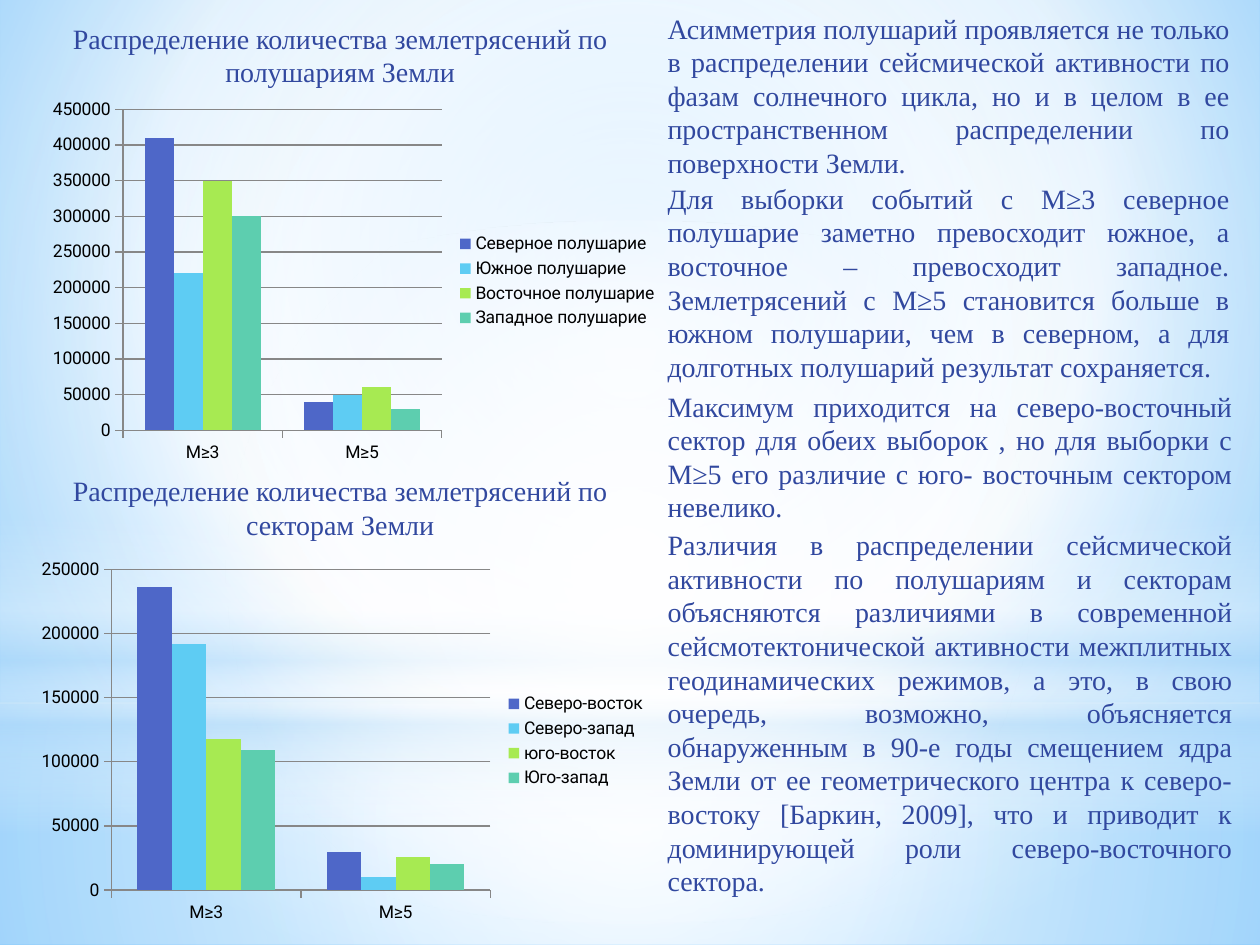
from dataclasses import dataclass

from lxml import etree
from pptx import Presentation
from pptx.chart.data import CategoryChartData
from pptx.dml.color import RGBColor
from pptx.enum.chart import XL_CHART_TYPE, XL_LEGEND_POSITION, XL_TICK_MARK
from pptx.enum.shapes import MSO_SHAPE
from pptx.enum.text import MSO_AUTO_SIZE, PP_ALIGN
from pptx.oxml.ns import qn
from pptx.util import Inches, Pt

COLUMNS = XL_CHART_TYPE.COLUMN_CLUSTERED
LEGEND_RIGHT = XL_LEGEND_POSITION.RIGHT
TICK_OUT = XL_TICK_MARK.OUTSIDE
RECT, OVAL = MSO_SHAPE.RECTANGLE, MSO_SHAPE.OVAL
GROW = MSO_AUTO_SIZE.SHAPE_TO_FIT_TEXT
CENTER, JUSTIFY = PP_ALIGN.CENTER, PP_ALIGN.JUSTIFY


@dataclass(frozen=True)
class Theme:
    """Colours, fonts and type sizes of the slide."""
    text: str = "31489F"
    chart_text: str = "000000"
    grid: str = "878787"
    white: str = "FFFFFF"
    haze: str = "B4DCFA"
    sky: str = "9ED5FF"
    deep_sky: str = "5BB9FF"
    series: tuple = ("4E67C8", "5ECCF3", "A7EA52", "5DCEAF")
    text_font: str = "Times New Roman"
    chart_font: str = "Roboto"
    text_size: int = 16
    chart_size: int = 10


THEME = Theme()
CENTRE = (50, 50, 50, 50)
MAGNITUDES = ("М≥3", "М≥5")

GLOWS = (
    (RECT, (0, 5.58, 10, 1.92), CENTRE,
     ((0, THEME.white, 91), (37, THEME.white, 76), (100, THEME.haze, 79))),
    (RECT, (0, 0, 10, 5.58), CENTRE,
     ((0, THEME.white, 89), (48, THEME.white, 62), (100, THEME.haze, 79))),
    (RECT, (0, 4.12, 10, 2.5), None,
     ((0, THEME.white, 0), (29, THEME.white, 30), (45, THEME.haze, 40),
      (55, THEME.white, 26), (65, THEME.haze, 60), (100, THEME.white, 0))),
    (OVAL, (0, 1.75, 10, 5.58), CENTRE,
     ((0, THEME.white, 100), (56, THEME.white, 0))),
)

CHARTS = (
    ((0.32, 0.73, 5, 3), (
        ("Северное полушарие", (410000, 40000)),
        ("Южное полушарие", (220000, 50000)),
        ("Восточное полушарие", (350000, 60000)),
        ("Западное полушарие", (300000, 30000)))),
    ((0.23, 4.38, 5, 3), (
        ("Северо-восток", (236000, 30000)),
        ("Северо-запад", (192000, 10000)),
        ("юго-восток", (118000, 26000)),
        ("Юго-запад", (109000, 20000)))),
)

TEXTS = (
    ((5.2, 1.39, 4.66, 1.72), JUSTIFY,
     "Для выборки событий с М≥3 северное полушарие заметно превосходит южное, "
     "а восточное – превосходит западное. Землетрясений с М≥5 становится больше "
     "в южном полушарии, чем в северном, а для долготных полушарий результат "
     "сохраняется."),
    ((5.2, 3.04, 4.68, 1.18), JUSTIFY,
     "Максимум приходится на северо-восточный сектор для обеих выборок , но для "
     "выборки с М≥5 его различие с юго- восточным сектором невелико."),
    ((5.2, 0.04, 4.66, 1.45), JUSTIFY,
     "Асимметрия полушарий проявляется не только в распределении сейсмической "
     "активности по фазам солнечного цикла, но и в целом в ее пространственном "
     "распределении по поверхности Земли."),
    ((5.2, 4.14, 4.68, 3.06), JUSTIFY,
     "Различия в распределении сейсмической активности по полушариям и секторам "
     "объясняются различиями в современной сейсмотектонической активности "
     "межплитных геодинамических режимов, а это, в свою очередь, возможно, "
     "объясняется обнаруженным в 90-е годы смещением ядра Земли от ее "
     "геометрического центра к северо-востоку [Баркин, 2009], что и приводит "
     "к доминирующей роли северо-восточного сектора."),
    ((0.2, 0.12, 5, 0.64), CENTER,
     "Распределение количества землетрясений по полушариям Земли"),
    ((0.2, 3.71, 5, 0.64), CENTER,
     "Распределение количества землетрясений по секторам Земли"),
)


def inches(box):
    """Turn a box of numbers into lengths."""
    return [Inches(value) for value in box]


def style_font(font, name, size, color):
    """Set typeface, size and colour of a font."""
    font.name = name
    font.size = Pt(size)
    font.color.rgb = RGBColor.from_string(color)


def paint_gradient(fill, owner, stops, focus):
    """Give a fill a circular gradient, or a vertical one without a focus."""
    fill.gradient()
    gradient = next(owner.iter(qn("a:gradFill")))
    for child in list(gradient):
        gradient.remove(child)
    stop_list = etree.SubElement(gradient, qn("a:gsLst"))
    for position, color, opacity in stops:
        stop = etree.SubElement(stop_list, qn("a:gs"), pos=str(position * 1000))
        paint = etree.SubElement(stop, qn("a:srgbClr"), val=color)
        if opacity < 100:
            etree.SubElement(paint, qn("a:alpha"), val=str(opacity * 1000))
    if focus is None:
        etree.SubElement(gradient, qn("a:lin"), ang="5400000", scaled="0")
        return
    circle = etree.SubElement(gradient, qn("a:path"), path="circle")
    edges = {side: str(value * 1000) for side, value in zip("ltrb", focus)}
    etree.SubElement(circle, qn("a:fillToRect"), **edges)


def add_glow(slide, preset, box, focus, stops):
    """Add a translucent patch of background light."""
    glow = slide.shapes.add_shape(preset, *inches(box))
    glow.shadow.inherit = False
    glow.line.fill.background()
    paint_gradient(glow.fill, glow._element, stops, focus)


def add_column_chart(slide, box, quakes):
    """Add a clustered column chart of earthquake counts."""
    counts = CategoryChartData()
    counts.categories = MAGNITUDES
    for name, values in quakes:
        counts.add_series(name, values)
    chart = slide.shapes.add_chart(COLUMNS, *inches(box), counts).chart
    style_font(chart.font, THEME.chart_font, THEME.chart_size, THEME.chart_text)
    chart.has_title = False
    chart.has_legend = True
    chart.legend.position = LEGEND_RIGHT
    chart.legend.include_in_layout = False
    chart.value_axis.has_major_gridlines = True
    for axis in (chart.category_axis, chart.value_axis):
        axis.major_tick_mark = TICK_OUT
    for part in (chart.category_axis, chart.value_axis,
                 chart.value_axis.major_gridlines):
        part.format.line.color.rgb = RGBColor.from_string(THEME.grid)
        part.format.line.width = Pt(0.75)
    plot = chart.plots[0]
    plot.gap_width = 150
    plot.vary_by_categories = False
    for series, color in zip(plot.series, THEME.series):
        series.format.fill.solid()
        series.format.fill.fore_color.rgb = RGBColor.from_string(color)


def add_text(slide, box, alignment, wording):
    """Add a wrapped paragraph of text."""
    frame = slide.shapes.add_textbox(*inches(box)).text_frame
    frame.word_wrap = True
    frame.auto_size = GROW
    paragraph = frame.paragraphs[0]
    paragraph.text = wording
    paragraph.alignment = alignment
    style_font(paragraph.font, THEME.text_font, THEME.text_size, THEME.text)


def main():
    """Build the slide and save it."""
    deck = Presentation()
    deck.slide_width, deck.slide_height = Inches(10), Inches(7.5)
    slide = deck.slides.add_slide(deck.slide_layouts[6])
    sky = ((0, THEME.sky, 100), (60, THEME.white, 100), (100, THEME.deep_sky, 100))
    paint_gradient(slide.background.fill, slide._element, sky, (20, 10, 20, 60))
    for glow in GLOWS:
        add_glow(slide, *glow)
    for chart in CHARTS:
        add_column_chart(slide, *chart)
    for text in TEXTS:
        add_text(slide, *text)
    deck.save("out.pptx")


if __name__ == "__main__":
    main()
